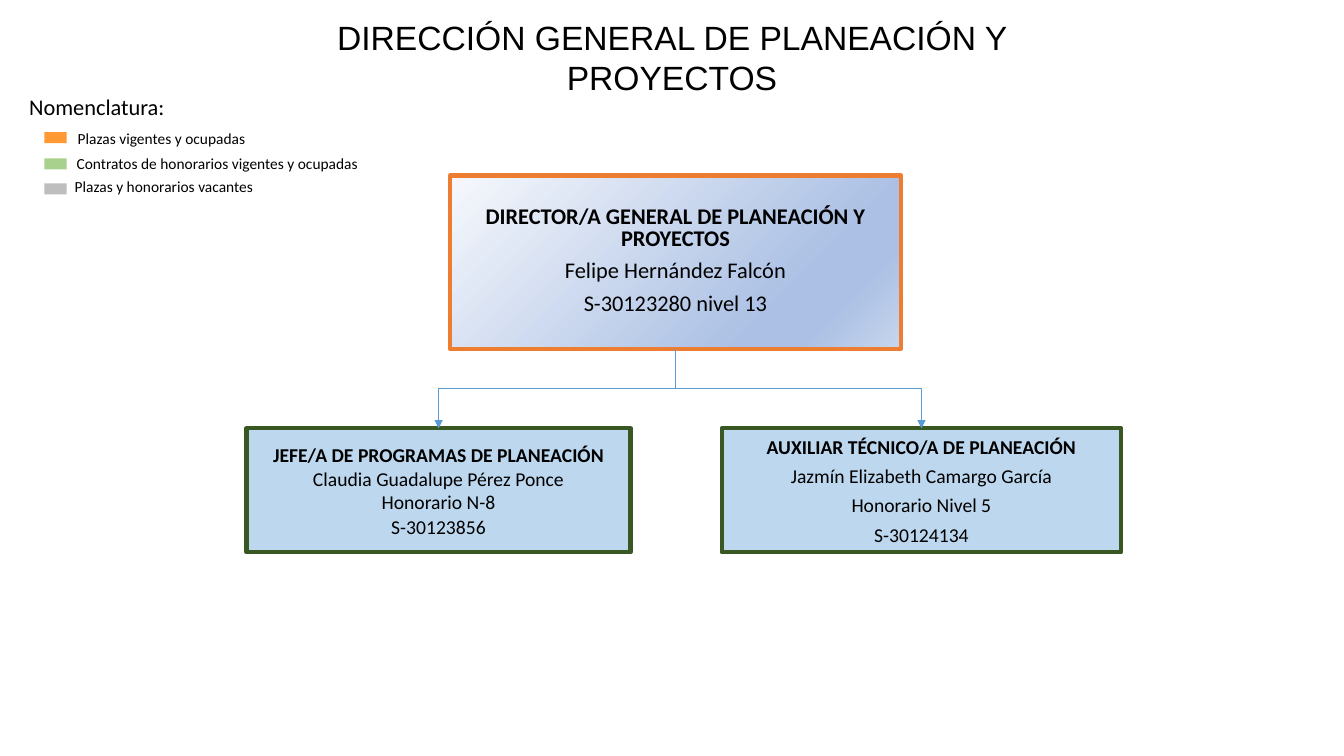
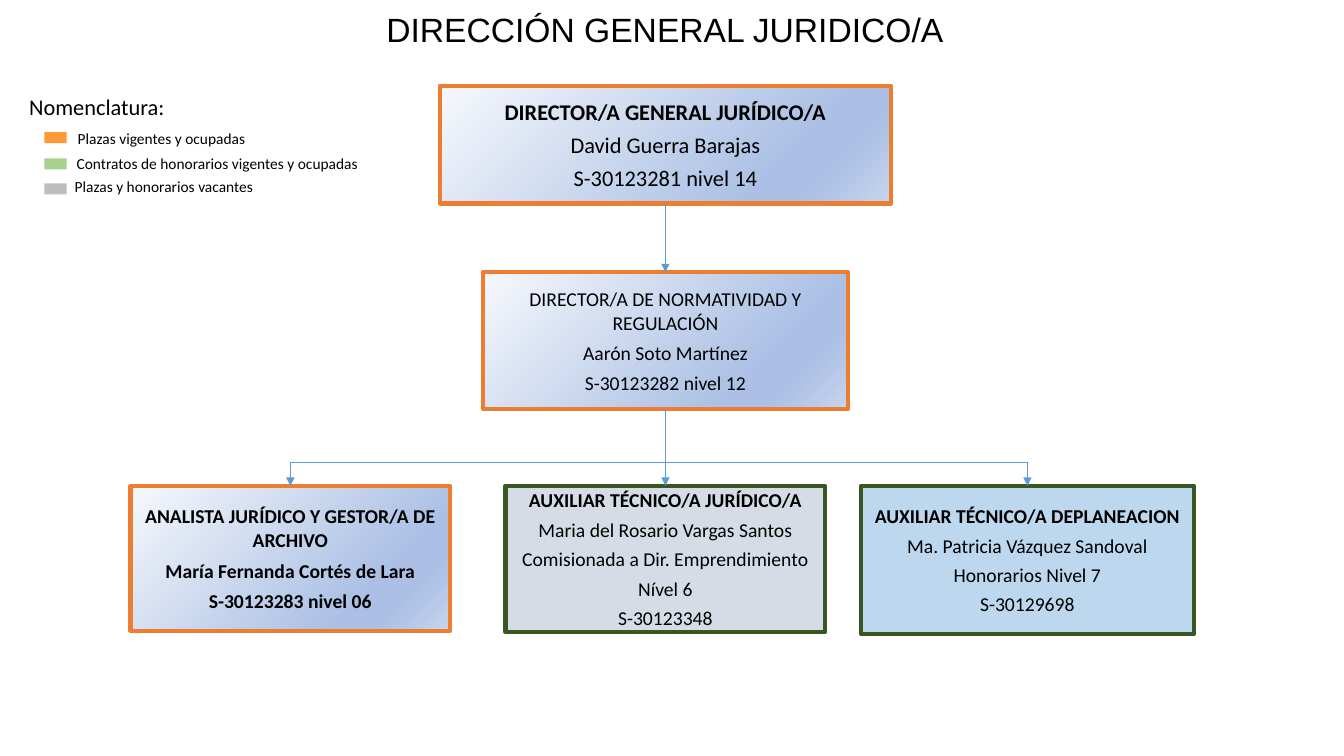
from dataclasses import dataclass

from lxml.etree import SubElement
from pptx import Presentation
from pptx.dml.color import RGBColor as Color
from pptx.enum.shapes import MSO_CONNECTOR as Link, MSO_SHAPE as Shape
from pptx.enum.text import MSO_ANCHOR as Anchor, PP_ALIGN as Align
from pptx.oxml.ns import qn
from pptx.util import Inches, Pt


@dataclass(frozen=True)
class Theme:
    ink: str = "000000"
    orange: str = "ED7D31"
    green: str = "385723"
    pale_blue: str = "BDD7EE"
    pale_gray: str = "D6DCE5"
    link: str = "5B9BD5"
    gradient: tuple = ((0, "F6F8FC"), (74, "ABC0E4"), (83, "ABC0E4"), (100, "C7D5ED"))
    title_font: str = "Arial"
    body_font: str = "Calibri"
    title_size: int = 24
    lead_size: int = 16
    post_size: int = 14
    key_size: int = 11


THEME = Theme()

# Kinds of post: (fill, border)
STAFF = (THEME.gradient, THEME.orange)
CONTRACT = (THEME.pale_blue, THEME.green)
SECONDED = (THEME.pale_gray, THEME.green)

# Key entries: (swatch colour, swatch top, label left, label top, label width, label)
KEY = (
    ("FF9933", 1.31, 0.77, 1.27, 1.72, "Plazas vigentes y ocupadas"),
    ("A9D18E", 1.57, 0.76, 1.52, 2.87, "Contratos de honorarios vigentes y ocupadas"),
    ("BEBEBE", 1.82, 0.74, 1.75, 2.65, "Plazas y honorarios vacantes"),
)


def apply(target, values):
    for name, value in values.items():
        setattr(target, name, value)


def write(para, text, size, font=THEME.body_font, bold=False):
    span = para.add_run()
    span.text = text
    apply(span.font, {"name": font, "size": Pt(size), "bold": bold})
    span.font.color.rgb = Color.from_string(THEME.ink)


def paint(shape, fill):
    """Fill with one colour, or with a diagonal gradient given as stops."""
    if isinstance(fill, str):
        shape.fill.solid()
        shape.fill.fore_color.rgb = Color.from_string(fill)
        return
    shape.fill.gradient()
    shape.fill.gradient_angle = 315
    stops = shape.element.spPr.find(qn("a:gradFill")).find(qn("a:gsLst"))
    stops.clear()
    for position, color in fill:
        stop = SubElement(stops, qn("a:gs"), pos=str(position * 1000))
        SubElement(stop, qn("a:srgbClr"), val=color)


def add_rectangle(slide, left, top, width, height, fill):
    box = slide.shapes.add_shape(Shape.RECTANGLE, *map(Inches, (left, top, width, height)))
    box.shadow.inherit = False
    paint(box, fill)
    return box


def add_label(slide, left, top, width, height, text, size):
    box = slide.shapes.add_textbox(*map(Inches, (left, top, width, height)))
    apply(box.text_frame, {"word_wrap": True, "margin_left": 0, "margin_right": 0,
                           "margin_top": Inches(0.01), "margin_bottom": 0})
    write(box.text_frame.paragraphs[0], text, size)


def add_title(slide, left, top, text):
    box = slide.shapes.add_textbox(*map(Inches, (left, top, 8.43, 0.5)))
    box.text_frame.word_wrap = True
    para = box.text_frame.paragraphs[0]
    para.alignment = Align.CENTER
    write(para, text, THEME.title_size, THEME.title_font)


def add_key(slide):
    add_label(slide, 0.29, 0.91, 1.74, 0.28, "Nomenclatura:", THEME.lead_size)
    for color, swatch_top, left, top, width, text in KEY:
        swatch = add_rectangle(slide, 0.44, swatch_top, 0.22, 0.11, color)
        swatch.line.fill.background()
        add_label(slide, left, top, width, 0.2, text, THEME.key_size)


def add_post(slide, center, top, width, height, kind, lines,
             size=THEME.post_size, gap=4.2, bold_lines=1):
    """Add a box for a post, centred on a given x."""
    fill, border = kind
    box = add_rectangle(slide, center - width / 2, top, width, height, fill)
    box.line.color.rgb = Color.from_string(border)
    box.line.width = Pt(3)
    frame = box.text_frame
    apply(frame, {"word_wrap": True, "vertical_anchor": Anchor.MIDDLE})
    for index, text in enumerate(lines):
        para = frame.add_paragraph() if index else frame.paragraphs[0]
        para.alignment = Align.CENTER
        if index:
            para.space_before = Pt(gap)
        write(para, text, size, bold=index < bold_lines)
    return box


def add_link(slide, upper, lower, bend=0.5):
    """Join two posts with an arrow; bend is the share of the drop before the turn."""
    start_x, end_x = (box.left + box.width // 2 for box in (upper, lower))
    start_y, end_y = upper.top + upper.height, lower.top
    straight = abs(end_x - start_x) < Inches(0.01)
    line = slide.shapes.add_connector(Link.STRAIGHT if straight else Link.ELBOW,
                                      start_x, start_y, end_x, end_y)
    line.begin_connect(upper, 2)
    line.end_connect(lower, 0)
    props = line.element.spPr
    if not straight:
        # Turn the elbow so that it leaves downwards
        drop, run = end_y - start_y, abs(end_x - start_x)
        apply(line, {"left": (start_x + end_x - drop) // 2,
                     "top": (start_y + end_y - run) // 2,
                     "width": drop, "height": run})
        frame = props.find(qn("a:xfrm"))
        frame.attrib.clear()
        turn = {"rot": "5400000"} if end_x < start_x else {"rot": "16200000", "flipH": "1"}
        for name, value in turn.items():
            frame.set(name, value)
        adjust = props.find(qn("a:prstGeom")).find(qn("a:avLst"))
        SubElement(adjust, qn("a:gd"), name="adj1", fmla=f"val {round(bend * 100000)}")
    line.line.color.rgb = Color.from_string(THEME.link)
    line.line.width = Pt(0.5)
    SubElement(props.find(qn("a:ln")), qn("a:tailEnd"), type="triangle")
    SubElement(props, qn("a:effectLst"))


def build_planning(slide):
    add_title(slide, 2.45, 0.12, "DIRECCIÓN GENERAL DE PLANEACIÓN Y PROYECTOS")
    director = add_post(slide, 6.7, 1.74, 4.47, 1.72, STAFF, (
        "DIRECTOR/A GENERAL DE PLANEACIÓN Y PROYECTOS",
        "Felipe Hernández Falcón", "S-30123280 nivel 13"), THEME.lead_size)
    director.text_frame.paragraphs[0].line_spacing = Pt(15.1)
    assistant = add_post(slide, 9.14, 4.25, 3.96, 1.23, CONTRACT, (
        "AUXILIAR TÉCNICO/A DE PLANEACIÓN", "Jazmín Elizabeth Camargo García",
        "Honorario Nivel 5", "S-30124134"))
    programs = add_post(slide, 4.35, 4.25, 3.81, 1.23, CONTRACT, (
        "JEFE/A DE PROGRAMAS DE PLANEACIÓN",
        "Claudia Guadalupe Pérez Ponce Honorario N-8", "S-30123856"), gap=0.8)
    # Narrow the lower lines so that the fee level wraps below the name
    for para in programs.text_frame.paragraphs[1:]:
        para.line_spacing = Pt(16.6)
        for side in ("marL", "marR"):
            para._p.get_or_add_pPr().set(side, str(Inches(0.45)))
    add_link(slide, director, programs)
    add_link(slide, director, assistant)


def build_legal(slide):
    add_title(slide, 2.38, 0.04, "DIRECCIÓN GENERAL JURIDICO/A")
    axis = 6.6
    director = add_post(slide, axis, 0.85, 4.47, 1.17, STAFF, (
        "DIRECTOR/A GENERAL JURÍDICO/A", "David Guerra Barajas",
        "S-30123281 nivel 14"), THEME.lead_size)
    rules = add_post(slide, axis, 2.7, 3.62, 1.36, STAFF, (
        "DIRECTOR/A DE NORMATIVIDAD Y REGULACIÓN", "Aarón Soto Martínez",
        "S-30123282 nivel 12"), gap=4.7, bold_lines=0)
    analyst = add_post(slide, 2.88, 4.82, 3.17, 1.44, STAFF, (
        "ANALISTA JURÍDICO Y GESTOR/A DE ARCHIVO", "María Fernanda Cortés de Lara",
        "S-30123283 nivel 06"), gap=5.2, bold_lines=3)
    assistant = add_post(slide, axis, 4.82, 3.17, 1.45, SECONDED, (
        "AUXILIAR TÉCNICO/A JURÍDICO/A", "Maria del Rosario Vargas Santos",
        "Comisionada a Dir. Emprendimiento", "Nível 6", "S-30123348"))
    planner = add_post(slide, 10.19, 4.82, 3.3, 1.47, CONTRACT, (
        "AUXILIAR TÉCNICO/A DEPLANEACION", "Ma. Patricia Vázquez Sandoval",
        "Honorarios Nivel 7", "S-30129698"))
    add_link(slide, director, rules)
    add_link(slide, rules, analyst, 0.7)
    add_link(slide, rules, assistant)
    add_link(slide, rules, planner, 0.69)


def main():
    deck = Presentation()
    apply(deck, {"slide_width": Inches(13.33), "slide_height": Inches(7.5)})
    for build in (build_planning, build_legal):
        page = deck.slides.add_slide(deck.slide_layouts[6])
        build(page)
        add_key(page)
    deck.save("out.pptx")


if __name__ == "__main__":
    main()
